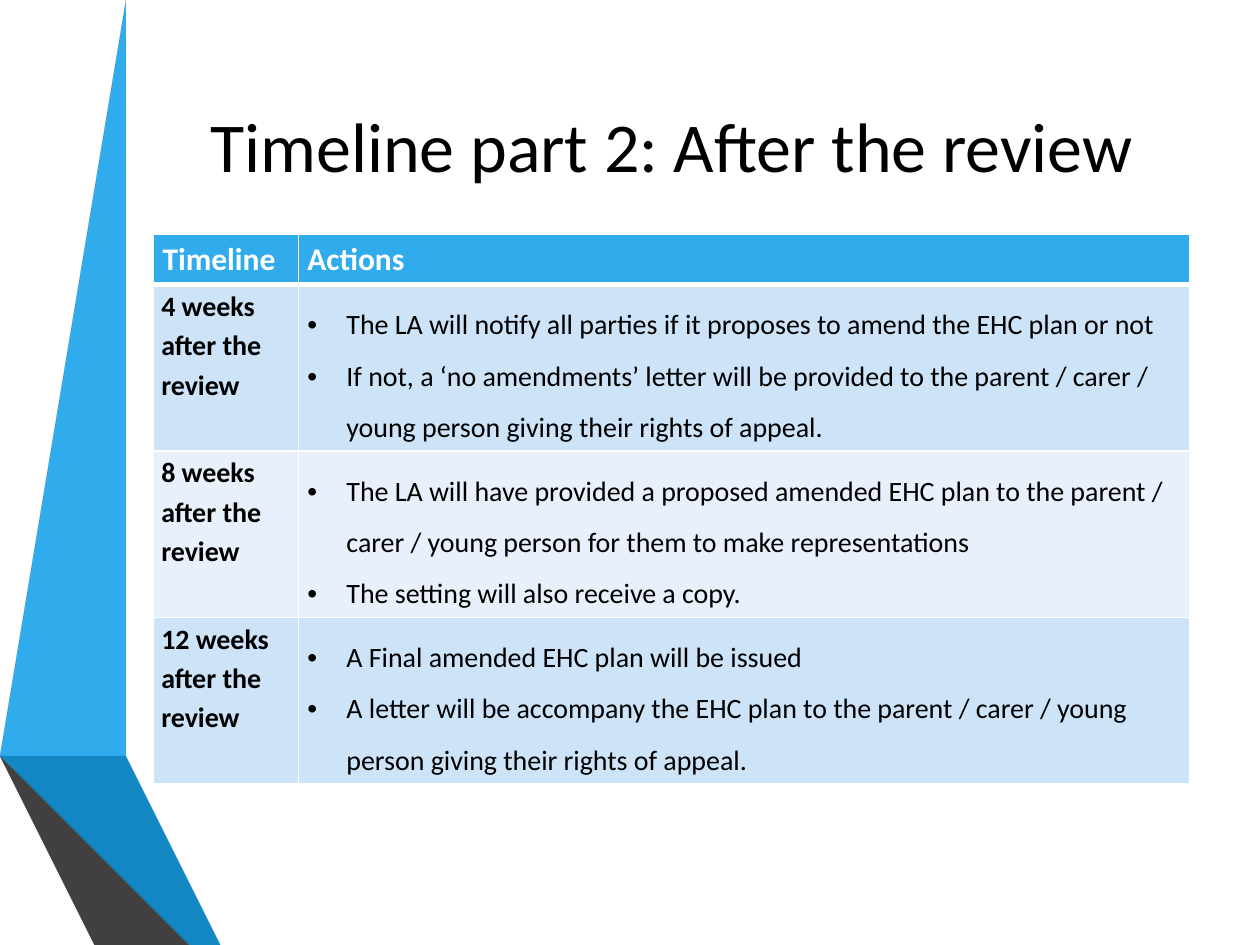
from lxml import etree
from pptx import Presentation
from pptx.dml.color import RGBColor
from pptx.enum.text import MSO_ANCHOR, PP_ALIGN
from pptx.oxml.ns import qn
from pptx.util import Inches, Pt

MIDDLE = MSO_ANCHOR.MIDDLE
CENTER = PP_ALIGN.CENTER

WHITE = RGBColor(0xFF, 0xFF, 0xFF)
BLACK = RGBColor(0, 0, 0)
SKY = RGBColor(0x30, 0xAC, 0xEC)
BLUE = RGBColor(0x12, 0x87, 0xC3)
NAVY = RGBColor(0x0C, 0x5A, 0x82)
GREY = RGBColor(0x59, 0x59, 0x59)
DARK = RGBColor(0x40, 0x40, 0x40)
COAL = RGBColor(0x26, 0x26, 0x26)
PALE = RGBColor(0xCD, 0xE3, 0xF8)
FAINT = RGBColor(0xE8, 0xF1, 0xFB)

FONT = "Calibri"
WIDE, HIGH = 10, 7.5
LEFT, SPAN = 1.22, 8.22
COLS = (1.15, 7.07)
HEAD, BODY = 0.4, 1.32
INDENT = Inches(0.31)

RIBBONS = [
    (SKY, [(0.38, 5.78), (0.58, 5.83), (1.3, 0), (1.09, 0)]),
    (GREY, [(1.04, 0), (0.83, 0), (0.12, 5.73), (0.33, 5.77)]),
    (COAL, [(0.12, 5.73), (1.09, HIGH), (1.13, HIGH)]),
    (NAVY, [(0.38, 5.79), (1.56, HIGH), (1.6, HIGH)]),
    (BLUE, [(0.38, 5.78), (1.6, HIGH), (2.12, HIGH), (0.58, 5.83)]),
    (DARK, [(0.12, 5.73), (1.13, HIGH), (1.51, HIGH), (0.36, 5.83),
            (0.32, 5.77)]),
]

STEPS = [
    ("4 weeks after the review", [
        "The LA will notify all parties if it proposes to amend the EHC plan "
        "or not",
        "If not, a ‘no amendments’ letter will be provided to the parent / "
        "carer / young person giving their rights of appeal."]),
    ("8 weeks after the review", [
        "The LA will have provided a proposed amended EHC plan to the parent "
        "/ carer / young person for them to make representations",
        "The setting will also receive a copy."]),
    ("12 weeks after the review", [
        "A Final amended EHC plan will be issued",
        "A letter will be accompany the EHC plan to the parent / carer / "
        "young person giving their rights of appeal."]),
]


def add_ribbon(slide, color, points):
    pen = slide.shapes.build_freeform(*points[0], scale=Inches(1))
    pen.add_line_segments(points[1:], close=True)
    shape = pen.convert_to_shape()
    shape.shadow.inherit = False
    shape.fill.solid()
    shape.fill.fore_color.rgb = color
    shape.line.fill.background()


def style(para, size, color, bold=False):
    font = para.font
    font.name, font.size, font.bold = FONT, Pt(size), bold
    font.color.rgb = color


def add_title(slide, text):
    box = slide.shapes.add_textbox(Inches(LEFT), Inches(HIGH * 0.1),
                                   Inches(SPAN), Inches(0.8))
    frame = box.text_frame
    frame.word_wrap = True
    frame.vertical_anchor = MIDDLE
    para = frame.paragraphs[0]
    para.text, para.alignment = text, CENTER
    style(para, 40, BLACK)


def add_bullet(para):
    props = para._p.get_or_add_pPr()
    props.set("marL", str(INDENT))
    props.set("indent", str(-INDENT))
    etree.SubElement(props, qn("a:buFont"), typeface="Arial")
    etree.SubElement(props, qn("a:buChar"), char="•")


def set_edges(cell, top, bottom):
    """Draw white cell borders; top and bottom are widths in points."""
    props = cell._tc.get_or_add_tcPr()
    for side, width in (("L", 1), ("R", 1), ("T", top), ("B", bottom)):
        line = etree.SubElement(props, qn("a:ln" + side), w=str(Pt(width)))
        fill = etree.SubElement(line, qn("a:solidFill"))
        etree.SubElement(fill, qn("a:srgbClr"), val=str(WHITE))


def fill_cell(cell, lines, color, pad, size, ink, bold, space=1.0,
              bullets=False):
    cell.margin_left = cell.margin_right = Inches(pad[0])
    cell.margin_top = cell.margin_bottom = Inches(pad[1])
    cell.fill.solid()
    cell.fill.fore_color.rgb = color
    cell.text = "\n".join(lines)
    for para in cell.text_frame.paragraphs:
        para.line_spacing = space
        style(para, size, ink, bold)
        if bullets:
            add_bullet(para)


def add_plan(slide):
    rows = len(STEPS) + 1
    table = slide.shapes.add_table(
        rows, len(COLS), Inches(LEFT), Inches(1.86), Inches(SPAN),
        Inches(HEAD + BODY * len(STEPS))).table
    for col, width in zip(table.columns, COLS):
        col.width = Inches(width)
    for i, row in enumerate(table.rows):
        row.height = Inches(BODY if i else HEAD)
        for cell in row.cells:
            set_edges(cell, 3 if i == 1 else 1, 1 if i else 3)
    for cell, text in zip(table.rows[0].cells, ("Timeline", "Actions")):
        fill_cell(cell, [text], SKY, (0.07, 0.05), 18, WHITE, True)
    for i, (when, acts) in enumerate(STEPS, 1):
        color = PALE if i % 2 else FAINT
        fill_cell(table.cell(i, 0), [when], color, (0.06, 0), 16, BLACK,
                  True, 1.15)
        fill_cell(table.cell(i, 1), acts, color, (0.07, 0.05), 16, BLACK,
                  False, 1.5, bullets=True)


def main():
    deck = Presentation()
    deck.slide_width, deck.slide_height = Inches(WIDE), Inches(HIGH)
    slide = deck.slides.add_slide(deck.slide_layouts[6])
    for color, points in RIBBONS:
        add_ribbon(slide, color, points)
    add_title(slide, "Timeline part 2: After the review")
    add_plan(slide)
    deck.save("out.pptx")


if __name__ == "__main__":
    main()
